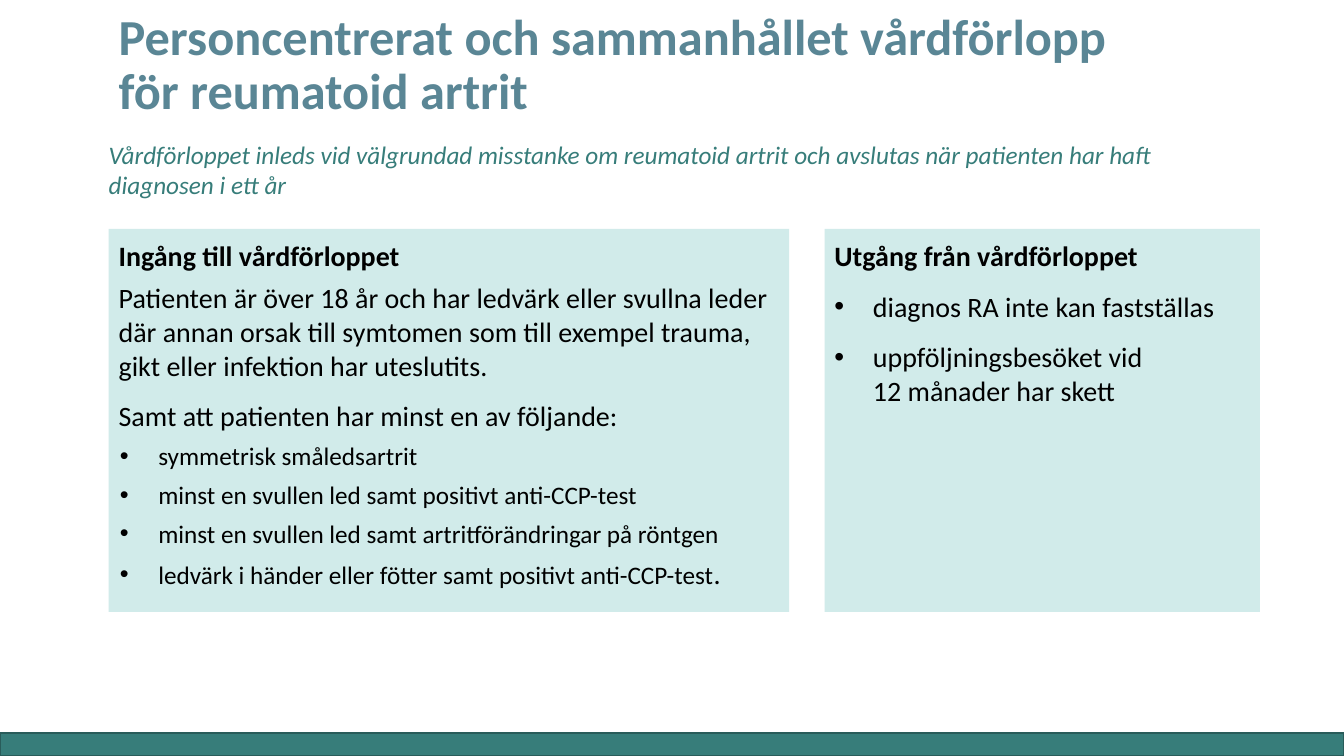
from lxml.etree import SubElement
from pptx import Presentation
from pptx.dml.color import RGBColor
from pptx.enum.shapes import MSO_SHAPE
from pptx.enum.text import MSO_ANCHOR, PP_ALIGN
from pptx.oxml.ns import qn
from pptx.util import Cm, Pt

COLORS = {"title": "5A8695", "teal": "377D7A", "edge": "295C5A",
          "panel": "D1EBEA", "text": "000000"}
FONT = "Calibri"


def rgb(name):
    """Return the named colour."""
    return RGBColor.from_string(COLORS[name])


def add_run(p, text, size, color="text", bold=False, italic=False):
    """Add one formatted run to a paragraph."""
    r = p.add_run()
    r.text = text
    r.font.name, r.font.size = FONT, Pt(size)
    r.font.bold, r.font.italic = bold, italic
    r.font.color.rgb = rgb(color)


def add_para(tf, before=0, spacing=None, bullet=None):
    """Return a new left-aligned paragraph, with a bullet indent in cm if given."""
    first = tf.paragraphs[0]
    p = tf.add_paragraph() if first.runs else first
    p.alignment = PP_ALIGN.LEFT
    p.space_before = Pt(before)
    if spacing:
        p.line_spacing = spacing
    if bullet:
        pPr = p._p.get_or_add_pPr()
        pPr.set("marL", str(Cm(bullet)))
        pPr.set("indent", str(-Cm(0.97)))
        SubElement(pPr, qn("a:buFont")).set("typeface", "Arial")
        SubElement(pPr, qn("a:buChar")).set("char", "•")
    return p


def add_text_frame(s, box):
    """Add a wrapping text box and return its text frame."""
    tf = s.shapes.add_textbox(*map(Cm, box)).text_frame
    tf.word_wrap = True
    return tf


def add_rect(s, box, fill, edge=None):
    """Add a flat rectangle with an optional thin edge."""
    sp = s.shapes.add_shape(MSO_SHAPE.RECTANGLE, *map(Cm, box))
    sp.shadow.inherit = False
    sp.fill.solid()
    sp.fill.fore_color.rgb = rgb(fill)
    if edge:
        sp.line.color.rgb = rgb(edge)
        sp.line.width = Pt(1)
    else:
        sp.line.fill.background()
    return sp


def add_heading(s, x, y, w):
    """Place the title and the italic introduction."""
    tf = add_text_frame(s, (x, y, w, 1.47))
    tf.vertical_anchor = MSO_ANCHOR.BOTTOM
    add_run(add_para(tf, spacing=0.9),
            "Personcentrerat och sammanhållet vårdförlopp för reumatoid artrit",
            36, "title", bold=True)
    tf = add_text_frame(s, (x - 0.25, y + 1.68, w + 2.34, 2.57))
    add_run(add_para(tf),
            "Vårdförloppet inleds vid välgrundad misstanke om reumatoid artrit "
            "och avslutas när patienten har haft diagnosen i ett år",
            18, "teal", italic=True)


def add_panel(s, box, heading):
    """Place a tinted panel with a bold heading and return its text frame."""
    tf = add_rect(s, box, "panel").text_frame
    tf.word_wrap = True
    tf.vertical_anchor = MSO_ANCHOR.TOP
    add_run(add_para(tf, spacing=1.15), heading, 20, bold=True)
    return tf


def add_entry_panel(s, box):
    """Place the criteria for entering the care pathway."""
    tf = add_panel(s, box, "Ingång till vårdförloppet")
    add_run(add_para(tf, 6),
            "Patienten är över 18 år och har ledvärk eller svullna leder där annan "
            "orsak till symtomen som till exempel trauma, gikt eller infektion har "
            "uteslutits.", 20)
    add_run(add_para(tf, 12), "Samt att patienten har minst en av följande:", 20)
    for criterion in ("symmetrisk småledsartrit",
                      "minst en svullen led samt positivt anti-CCP-test",
                      "minst en svullen led samt artritförändringar på röntgen",
                      "ledvärk i händer eller fötter samt positivt anti-CCP-test"):
        p = add_para(tf, 6, bullet=1)
        p.level = 1
        add_run(p, criterion, 18)
    add_run(p, ".", 20)


def add_exit_panel(s, box):
    """Place the criteria for leaving the care pathway."""
    tf = add_panel(s, box, "Utgång från vårdförloppet")
    add_run(add_para(tf, 12, bullet=0.97), "diagnos RA inte kan fastställas", 20)
    p = add_para(tf, 12, bullet=0.97)
    add_run(p, "uppföljningsbesöket vid ", 20)
    p.add_line_break()
    add_run(p, "12 månader har skett", 20)


def add_footer(s, box):
    """Place the bar along the bottom edge."""
    add_rect(s, box, "teal", "edge")


def main():
    """Build and save the slide."""
    prs = Presentation()
    prs.slide_width, prs.slide_height = Cm(33.87), Cm(19.05)
    s = prs.slides.add_slide(prs.slide_layouts[6])
    add_footer(s, (0, 18.47, 33.87, 0.58))
    add_heading(s, 2.74, 1.7, 26.64)
    add_entry_panel(s, (2.74, 5.77, 17.15, 9.65))
    add_exit_panel(s, (20.78, 5.77, 10.97, 9.65))
    prs.save("out.pptx")


if __name__ == "__main__":
    main()
